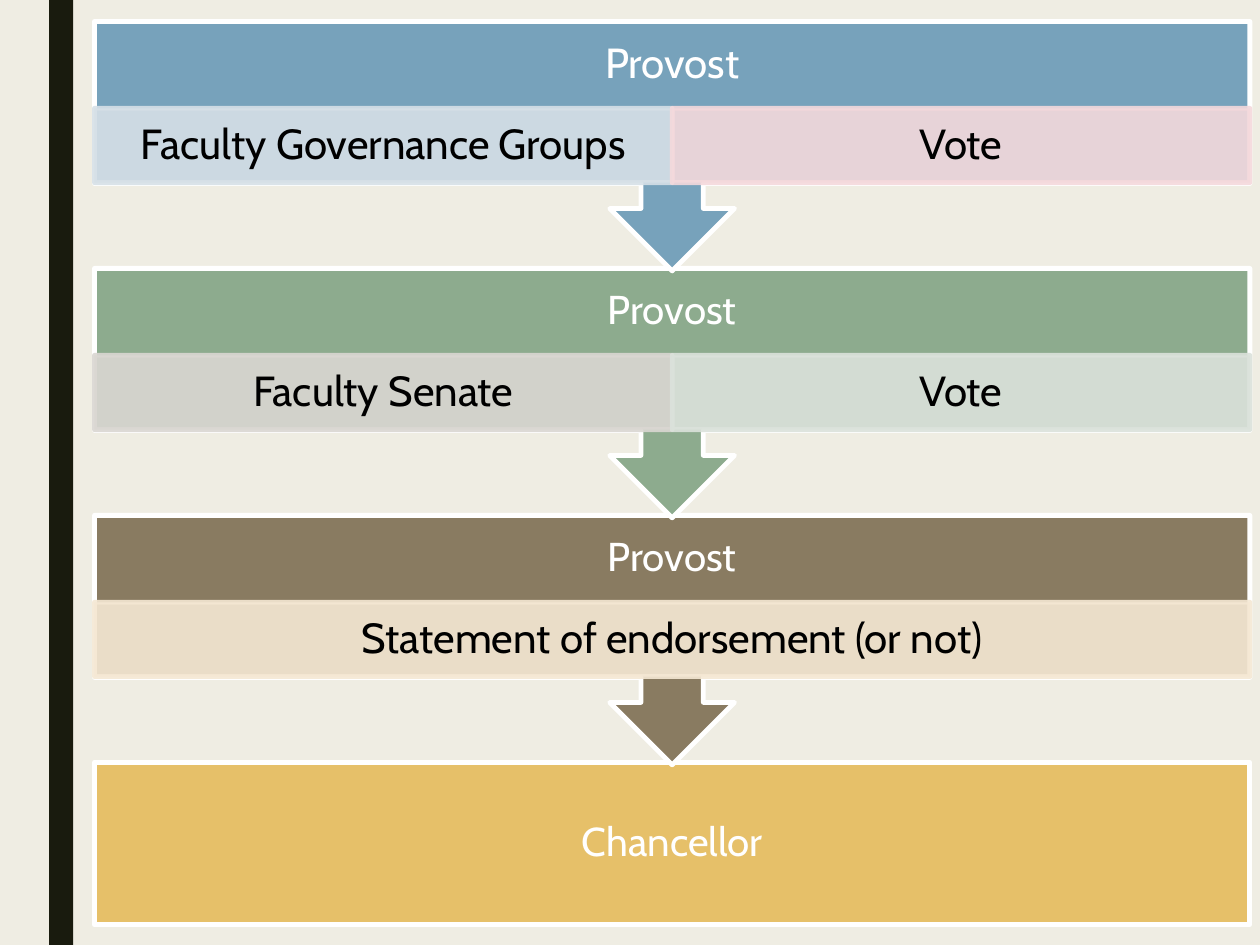
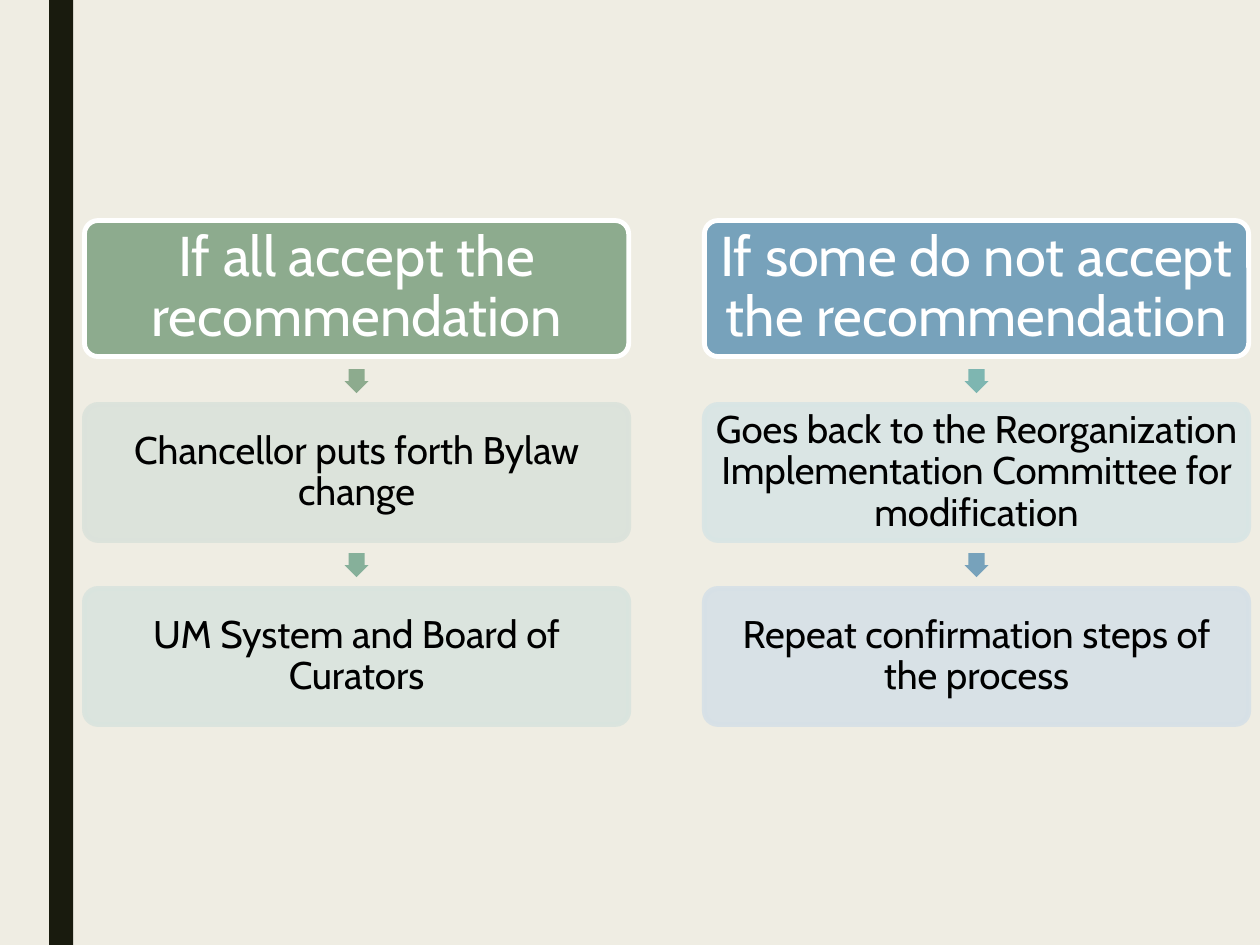
from lxml.etree import SubElement
from pptx import Presentation
from pptx.dml.color import RGBColor
from pptx.enum.shapes import MSO_SHAPE
from pptx.enum.text import MSO_ANCHOR, PP_ALIGN
from pptx.oxml.ns import qn
from pptx.util import Inches, Pt

BACKGROUND, BAND = "EFEDE3", "191B0E"
WHITE, BLACK = "FFFFFF", "000000"
BLUE, GREEN, BROWN, GOLD = "77A2BB", "8DAB8E", "897B61", "E6C069"
PALE_BLUE, PALE_GREEN = "D6E0E7", "DBE2DB"


def color(value):
    return RGBColor.from_string(value)


class Deck:
    font = "Cabin"
    line_width = Pt(2.75)
    opacity = 90

    def __init__(self, presentation):
        self.presentation = presentation
        fill = presentation.slide_master.background.fill
        fill.solid()
        fill.fore_color.rgb = color(BACKGROUND)

    def new_slide(self):
        self.slide = self.presentation.slides.add_slide(self.presentation.slide_layouts[6])
        self.shape(MSO_SHAPE.RECTANGLE, 0.39, 0, 0.19, 7.5, BAND)

    def shape(self, kind, left, top, width, height, fill, line=None):
        shape = self.slide.shapes.add_shape(
            kind, Inches(left), Inches(top), Inches(width), Inches(height))
        shape.shadow.inherit = False
        shape.fill.solid()
        shape.fill.fore_color.rgb = color(fill)
        if line:
            shape.line.color.rgb = color(line)
            shape.line.width = self.line_width
        else:
            shape.line.fill.background()
        return shape

    def pale_shape(self, kind, left, top, width, height, fill):
        """A shape whose fill and outline share one translucent colour."""
        shape = self.shape(kind, left, top, width, height, fill, fill)
        for rgb in shape.element.spPr.iter(qn("a:srgbClr")):
            SubElement(rgb, qn("a:alpha"), val=str(self.opacity * 1000))
        return shape

    def label(self, shape, text, size, font_color, insets):
        frame = shape.text_frame
        frame.word_wrap = True
        frame.vertical_anchor = MSO_ANCHOR.MIDDLE
        (frame.margin_left, frame.margin_top,
         frame.margin_right, frame.margin_bottom) = map(Inches, insets)
        paragraph = frame.paragraphs[0]
        paragraph.alignment = PP_ALIGN.CENTER
        paragraph.line_spacing = 0.9
        run = paragraph.add_run()
        run.text = text
        run.font.name = self.font
        run.font.size = Pt(size)
        run.font.color.rgb = color(font_color)

    def rounded_label(self, shape, text, size, font_color):
        shape.adjustments[0] = 0.1
        self.label(shape, text, size, font_color, [0.04] * 4)

    def small_arrow(self, center, top, fill):
        side = 0.19
        arrow = self.shape(MSO_SHAPE.DOWN_ARROW, center - side / 2, top, side, side, fill)
        arrow.adjustments[0] = 0.67
        arrow.adjustments[1] = 0.5


def approval_slide(deck):
    deck.new_slide()
    left, top, width, pitch = 0.75, 0.17, 9.17, 1.96
    box_height, header_height, detail_height = 1.29, 0.69, 0.59
    stages = [
        (BLUE, 24, [("Faculty Governance Groups", PALE_BLUE), ("Vote", "F4D9DC")]),
        (GREEN, 23, [("Faculty Senate", "DAD7D2"), ("Vote", PALE_GREEN)]),
        (BROWN, 23, [("Statement of endorsement (or not)", "F5E8D4")]),
    ]

    # Final stage
    chancellor = deck.shape(MSO_SHAPE.RECTANGLE, left, top + len(stages) * pitch,
                            width, box_height, GOLD, WHITE)
    deck.label(chancellor, "Chancellor", 23, WHITE, [0.18] * 4)

    # Earlier stages, bottom up so each arrow tip lies over the next box
    for index, (fill, size, details) in reversed(list(enumerate(stages))):
        stage_top = top + index * pitch
        callout = deck.shape(MSO_SHAPE.DOWN_ARROW_CALLOUT, left, stage_top,
                             width, 1.98, fill, WHITE)
        deck.label(callout, "Provost", size, WHITE,
                   (0.18, 0, 0.18, box_height - header_height))
        detail_width = width / len(details)
        for column, (text, detail_fill) in enumerate(details):
            detail = deck.pale_shape(
                MSO_SHAPE.RECTANGLE, left + column * detail_width,
                stage_top + header_height, detail_width, detail_height, detail_fill)
            deck.label(detail, text, 24, BLACK, (0.19, 0.03, 0.19, 0.03))


def outcome_slide(deck):
    deck.new_slide()
    top, width, height, pitch = 1.75, 4.32, 1.08, 1.46
    outcomes = [
        (0.67, "If all accept the recommendation", GREEN, [
            ("Chancellor puts forth Bylaw change", PALE_GREEN, GREEN),
            ("UM System and Board of Curators", "D9E4DE", "86B09A")]),
        (5.59, "If some do not accept the recommendation", BLUE, [
            ("Goes back to the Reorganization Implementation Committee for modification",
             "D8E5E5", "7EB6B1"),
            ("Repeat confirmation steps of the process", PALE_BLUE, BLUE)]),
    ]
    for left, condition, fill, steps in outcomes:
        header = deck.shape(MSO_SHAPE.ROUNDED_RECTANGLE, left, top, width, height, fill, WHITE)
        deck.rounded_label(header, condition, 32, WHITE)
        # Each step follows an arrow
        for index, (text, step_fill, arrow_fill) in enumerate(steps, start=1):
            step_top = top + index * pitch
            deck.small_arrow(left + width / 2, step_top - 0.28, arrow_fill)
            step = deck.pale_shape(MSO_SHAPE.ROUNDED_RECTANGLE, left, step_top,
                                   width, height, step_fill)
            deck.rounded_label(step, text, 22, BLACK)


def main():
    presentation = Presentation()
    presentation.slide_width = Inches(10)
    presentation.slide_height = Inches(7.5)
    deck = Deck(presentation)
    approval_slide(deck)
    outcome_slide(deck)
    presentation.save("out.pptx")


if __name__ == "__main__":
    main()
